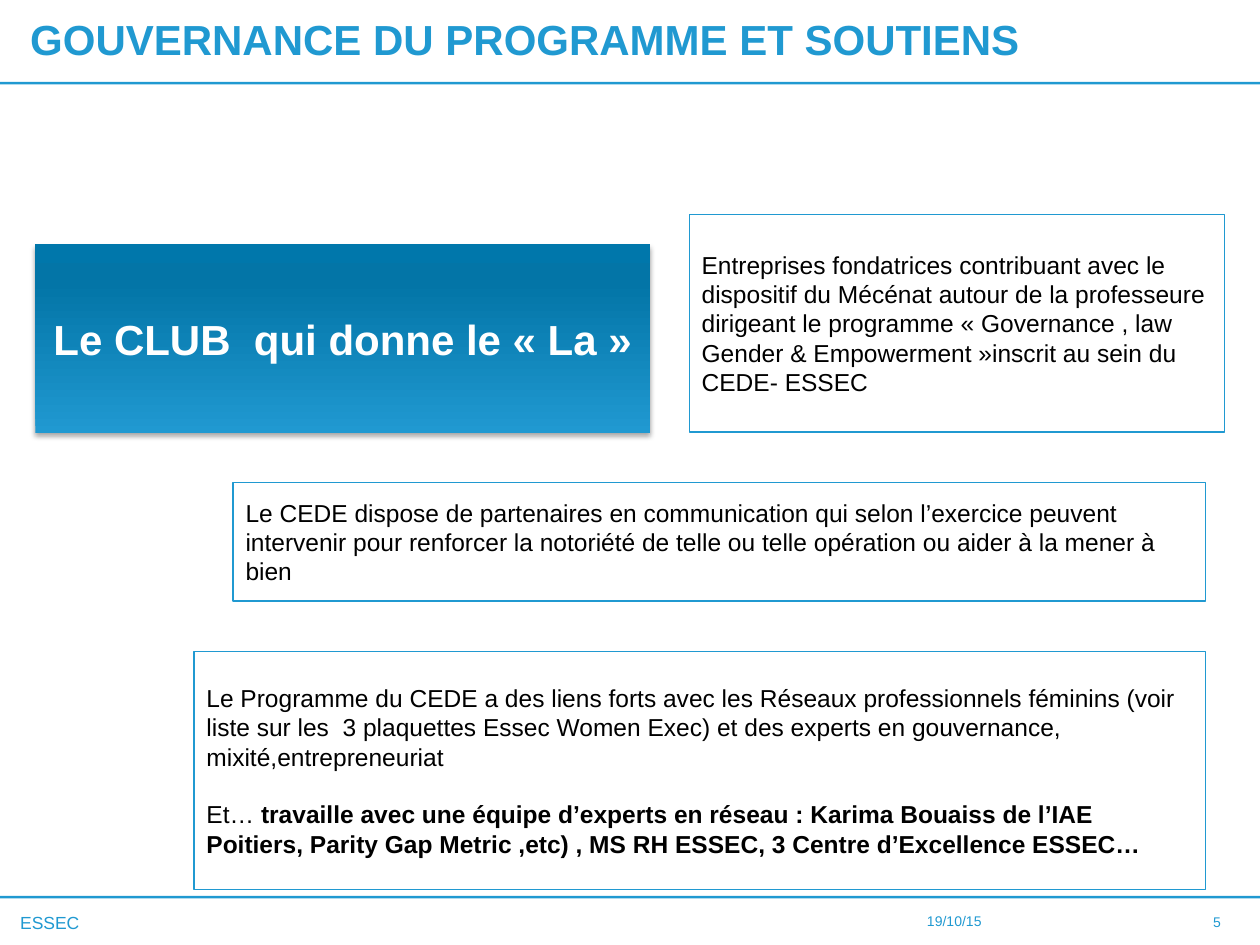
from copy import deepcopy
from dataclasses import dataclass

from lxml import etree
from pptx import Presentation
from pptx.dml.color import RGBColor
from pptx.enum.shapes import MSO_SHAPE
from pptx.enum.text import MSO_ANCHOR, PP_ALIGN
from pptx.oxml.ns import qn
from pptx.util import Inches, Pt

RECTANGLE = MSO_SHAPE.RECTANGLE
MIDDLE = MSO_ANCHOR.MIDDLE
LEFT, CENTER = PP_ALIGN.LEFT, PP_ALIGN.CENTER


@dataclass(frozen=True)
class Theme:
    """Colours, font and type sizes of the deck."""
    accent: str = "2099D1"
    ink: str = "000000"
    paper: str = "FFFFFF"
    gradient: tuple = ((0, "2099D1"), (0.8, "0375A7"), (1, "0077AB"))
    font: str = "Arial"
    title: int = 24
    body: int = 14
    label: int = 10
    small: int = 8
    rule: float = 0.02
    border: float = 0.75


THEME = Theme()
INSETS = (0.1, 0.05, 0.1, 0.05)

FOUNDERS = [[("Entreprises fondatrices contribuant avec le dispositif du Mécénat autour de la "
              "professeure dirigeant le programme « Governance , law Gender & "
              "Empowerment »inscrit au sein du CEDE- ESSEC", False)]]
PARTNERS = [[("Le CEDE dispose de partenaires en communication qui selon l’exercice peuvent "
              "intervenir pour renforcer la notoriété de telle ou telle opération ou aider "
              "à la mener à bien", False)]]
NETWORKS = [
    [("Le Programme du CEDE a des liens forts avec les Réseaux professionnels féminins "
      "(voir liste sur les  3 plaquettes Essec Women Exec) et des experts en gouvernance, "
      "mixité,entrepreneuriat", False)],
    [("Et… ", False),
     ("travaille avec une équipe d’experts en réseau : Karima Bouaiss de l’IAE Poitiers, "
      "Parity Gap Metric ,etc) , MS RH ESSEC, 3 Centre d’Excellence ESSEC…", True)],
]


def write(shape, paragraphs, size=THEME.body, color=THEME.ink, align=LEFT,
          insets=INSETS, gap=0):
    """Fill a shape with paragraphs, each a list of (text, bold) spans."""
    frame = shape.text_frame
    frame.word_wrap = True
    frame.vertical_anchor = MIDDLE
    (frame.margin_left, frame.margin_top,
     frame.margin_right, frame.margin_bottom) = map(Inches, insets)
    for index, spans in enumerate(paragraphs):
        para = frame.add_paragraph() if index else frame.paragraphs[0]
        para.alignment = align
        if index:
            para.space_before = Pt(gap)
        for text, bold in spans:
            span = para.add_run()
            span.text = text
            span.font.name = THEME.font
            span.font.size = Pt(size)
            span.font.bold = bold
            span.font.color.rgb = RGBColor.from_string(color)


def add_text(page, box, text, bold=False, **style):
    """Add a text box holding one line."""
    write(page.shapes.add_textbox(*map(Inches, box)), [[(text, bold)]], **style)


def add_rectangle(page, box):
    """Add a rectangle without fill, line or shadow."""
    shape = page.shapes.add_shape(RECTANGLE, *map(Inches, box))
    shape.shadow.inherit = False
    shape.fill.background()
    shape.line.fill.background()
    return shape


def add_rule(page, left, top, width):
    """Add a thin accent band."""
    band = add_rectangle(page, (left, top, width, THEME.rule))
    band.fill.solid()
    band.fill.fore_color.rgb = RGBColor.from_string(THEME.accent)


def add_header(page, box):
    """Place the title above its rule."""
    left, top, width, height = box
    add_text(page, (left + 0.24, top, width - 1.1, height),
             "GOUVERNANCE DU PROGRAMME ET SOUTIENS", bold=True, size=THEME.title,
             color=THEME.accent, insets=(0, 0, 0, 0.04))
    add_rule(page, left, top + height, width)


def add_footer(page, box):
    """Place the rule, school name, date and page number."""
    left, top, width, height = box
    add_rule(page, left, top, width)
    add_text(page, (left + 0.12, top + 0.03, 0.55, height - 0.03), "ESSEC",
             size=THEME.label, color=THEME.accent, align=CENTER, insets=(0, 0, 0, 0))
    small = {"size": THEME.small, "color": THEME.accent, "align": CENTER}
    add_text(page, (left + 6.56, top, 2.03, height), "19/10/15", **small)
    add_text(page, (left + width - 0.67, top + 0.03, 0.66, height - 0.03), "5", **small)


def add_outlined_note(page, box, paragraphs):
    """Place paragraphs in a thin accent frame."""
    note = add_rectangle(page, box)
    note.line.color.rgb = RGBColor.from_string(THEME.accent)
    note.line.width = Pt(THEME.border)
    write(note, paragraphs, gap=16)


def add_shadow(shape):
    """Cast a soft shadow below a shape."""
    effects = shape._element.spPr.find(qn("a:effectLst"))
    shadow = etree.SubElement(effects, qn("a:outerShdw"), blurRad=str(Pt(3.1)),
                              dist=str(Pt(1.8)), dir="5400000", rotWithShape="0")
    color = etree.SubElement(shadow, qn("a:srgbClr"), val=THEME.ink)
    etree.SubElement(color, qn("a:alpha"), val="35000")


def add_club_banner(page, box):
    """Place the gradient banner naming the club."""
    banner = add_rectangle(page, box)
    banner.fill.gradient()
    banner.fill.gradient_angle = 90
    stop_list = banner._element.spPr.find(qn("a:gradFill")).find(qn("a:gsLst"))
    stop_list.append(deepcopy(stop_list[-1]))
    for stop, (position, color) in zip(banner.fill.gradient_stops, THEME.gradient):
        stop.position = position
        stop.color.rgb = RGBColor.from_string(color)
    add_shadow(banner)
    write(banner, [[("Le CLUB  qui donne le « La »", True)]],
          size=THEME.title, color=THEME.paper, align=CENTER)


def main():
    """Build and save the deck."""
    deck = Presentation()
    deck.slide_width, deck.slide_height = Inches(10), Inches(7.5)
    page = deck.slides.add_slide(deck.slide_layouts[6])
    add_header(page, (0, 0, 10, 0.65))
    add_footer(page, (0, 7.11, 10, 0.39))
    add_outlined_note(page, (5.47, 1.7, 4.25, 1.73), FOUNDERS)
    add_outlined_note(page, (1.85, 3.83, 7.72, 0.94), PARTNERS)
    add_club_banner(page, (0.28, 1.94, 4.88, 1.5))
    add_outlined_note(page, (1.54, 5.17, 8.03, 1.89), NETWORKS)
    deck.save("out.pptx")


if __name__ == "__main__":
    main()
